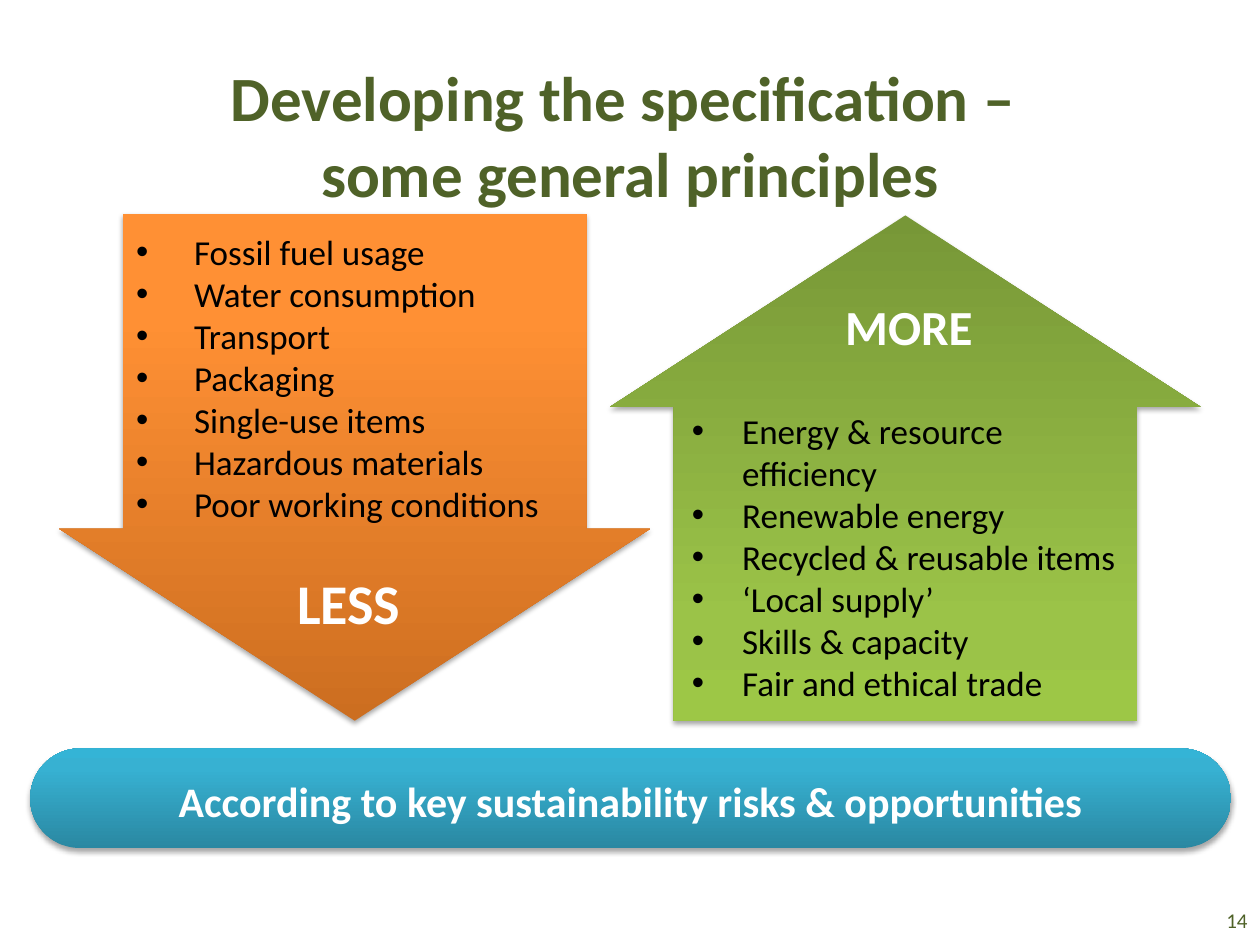
from collections import namedtuple
from dataclasses import dataclass

from pptx import Presentation
from pptx import util as u
from pptx.dml.color import RGBColor
from pptx.enum import shapes, text
from pptx.oxml import parse_xml
from pptx.oxml.ns import nsdecls, qn

Box = namedtuple("Box", "left top width height")


@dataclass(frozen=True)
class Theme:
    font: str = "Calibri"
    heading: str = "4F6228"
    body: str = "000000"
    light: str = "FFFFFF"
    orange: tuple = ("CC6E20", "FF9034", "FF9136")
    green: tuple = ("779737", "9BC348", "9DC746")
    blue: tuple = ("2A88A2", "37B1D2", "34B4D6")
    title_size: int = 36
    less_size: int = 32
    more_size: int = 28
    banner_size: int = 24
    list_size: int = 20
    number_size: int = 12


THEME = Theme()
LESS_ITEMS = ["Fossil fuel usage", "Water consumption", "Transport", "Packaging",
              "Single-use items", "Hazardous materials", "Poor working conditions"]
MORE_ITEMS = ["Energy & resource efficiency", "Renewable energy",
              "Recycled & reusable items", "‘Local supply’",
              "Skills & capacity", "Fair and ethical trade"]


def inches(box):
    return [u.Inches(length) for length in box]


def within(box, left, top, width, height):
    """Give the slide position of a box stated relative to another."""
    return Box(box.left + left, box.top + top, width, height)


def add_bullet(para, indent):
    props = para._p.get_or_add_pPr()
    props.set("marL", str(u.Inches(indent)))
    props.set("indent", str(-u.Inches(indent)))
    props.append(parse_xml(f'<a:buFont {nsdecls("a")} typeface="Arial"/>'))
    props.append(parse_xml(f'<a:buChar {nsdecls("a")} char="•"/>'))


def write(shape, lines, size, color, bold=False, align=text.PP_ALIGN.LEFT,
          anchor=text.MSO_ANCHOR.TOP, insets=(0.1, 0.05, 0.1, 0.05),
          wrap=True, indent=None):
    frame = shape.text_frame
    frame.auto_size = text.MSO_AUTO_SIZE.NONE
    frame.word_wrap = wrap
    frame.vertical_anchor = anchor
    (frame.margin_left, frame.margin_top,
     frame.margin_right, frame.margin_bottom) = inches(insets)
    for index, line in enumerate(lines):
        para = frame.add_paragraph() if index else frame.paragraphs[0]
        para.text = line
        para.alignment = align
        if indent:
            add_bullet(para, indent)
        for span in para.runs:
            span.font.name = THEME.font
            span.font.size = u.Pt(size)
            span.font.bold = bold
            span.font.color.rgb = RGBColor.from_string(color)


def add_glossy_shape(parent, kind, box, colors, adjustments):
    """Add a shape with an upward three-stop gradient and a soft shadow."""
    shape = parent.add_shape(kind, *inches(box))
    for index, value in enumerate(adjustments):
        shape.adjustments[index] = value
    shape.line.fill.background()
    stops = "".join(
        f'<a:gs pos="{place * 1000}"><a:srgbClr val="{color}"/></a:gs>'
        for place, color in zip((0, 80, 100), colors))
    props = shape._element.spPr
    props.find(qn("a:prstGeom")).addnext(parse_xml(
        f'<a:gradFill {nsdecls("a")} rotWithShape="1"><a:gsLst>{stops}</a:gsLst>'
        '<a:lin ang="16200000" scaled="0"/></a:gradFill>'))
    props.append(parse_xml(
        f'<a:effectLst {nsdecls("a")}><a:outerShdw blurRad="{u.Pt(3.1)}" '
        f'dist="{u.Pt(1.8)}" dir="5400000" rotWithShape="0"><a:srgbClr val="000000">'
        '<a:alpha val="35000"/></a:srgbClr></a:outerShdw></a:effectLst>'))
    return shape


def add_arrow_panel(page, box, colors, items, list_box, list_top_inset, indent,
                    label, label_box, label_size, label_top_inset, upward=False):
    group = page.shapes.add_group_shape().shapes
    arrow = add_glossy_shape(group, shapes.MSO_SHAPE.DOWN_ARROW, box, colors,
                             (0.784, 0.379))
    if upward:
        arrow._element.spPr.find(qn("a:xfrm")).set("flipV", "1")
    bullets = group.add_textbox(*inches(within(box, *list_box)))
    write(bullets, items, THEME.list_size, THEME.body, indent=indent,
          insets=(0.02, list_top_inset, 0.02, 0.05))
    caption = group.add_textbox(*inches(within(box, *label_box)))
    write(caption, [label], label_size, THEME.light, bold=True, wrap=False,
          insets=(0.1, label_top_inset, 0.1, 0.05))


def add_title(page, box):
    title = page.shapes.title
    title.left, title.top, title.width, title.height = inches(box)
    write(title, ["Developing the specification – \vsome general principles"],
          THEME.title_size, THEME.heading, bold=True,
          align=text.PP_ALIGN.CENTER, anchor=text.MSO_ANCHOR.MIDDLE)


def add_banner(page, box):
    banner = add_glossy_shape(page.shapes, shapes.MSO_SHAPE.ROUNDED_RECTANGLE, box,
                              THEME.blue, (0.5,))
    write(banner, ["According to key sustainability risks & opportunities"],
          THEME.banner_size, THEME.light, bold=True, align=text.PP_ALIGN.CENTER,
          anchor=text.MSO_ANCHOR.MIDDLE, insets=(0.06, 0.04, 0.06, 0))


def add_page_number(page, box):
    number = page.shapes.add_textbox(*inches(box))
    write(number, ["14"], THEME.number_size, THEME.heading,
          align=text.PP_ALIGN.RIGHT, anchor=text.MSO_ANCHOR.MIDDLE)


def main():
    deck = Presentation()
    deck.slide_width, deck.slide_height = u.Inches(10), u.Inches(7.5)
    page = deck.slides.add_slide(deck.slide_layouts.get_by_name("Title Only"))
    add_page_number(page, Box(9.24, 7.1, 0.76, 0.4))
    add_title(page, Box(0, 0.44, 10, 1.25))
    add_arrow_panel(page, Box(0.47, 1.7, 4.69, 4.02), THEME.orange, LESS_ITEMS,
                    list_box=(0.59, 0.08, 3.51, 2.46), list_top_inset=0.05,
                    indent=0.46, label="LESS", label_box=(1.79, 2.76, 1.03, 0.64),
                    label_size=THEME.less_size, label_top_inset=0.05)
    add_arrow_panel(page, Box(4.84, 1.71, 4.69, 4.01), THEME.green, MORE_ITEMS,
                    list_box=(0.63, 1.41, 3.41, 2.54), list_top_inset=0.13,
                    indent=0.4, label="MORE", label_box=(1.77, 0.51, 1.22, 0.65),
                    label_size=THEME.more_size, label_top_inset=0.13, upward=True)
    add_banner(page, Box(0.24, 5.94, 9.53, 0.79))
    deck.save("out.pptx")


if __name__ == "__main__":
    main()
